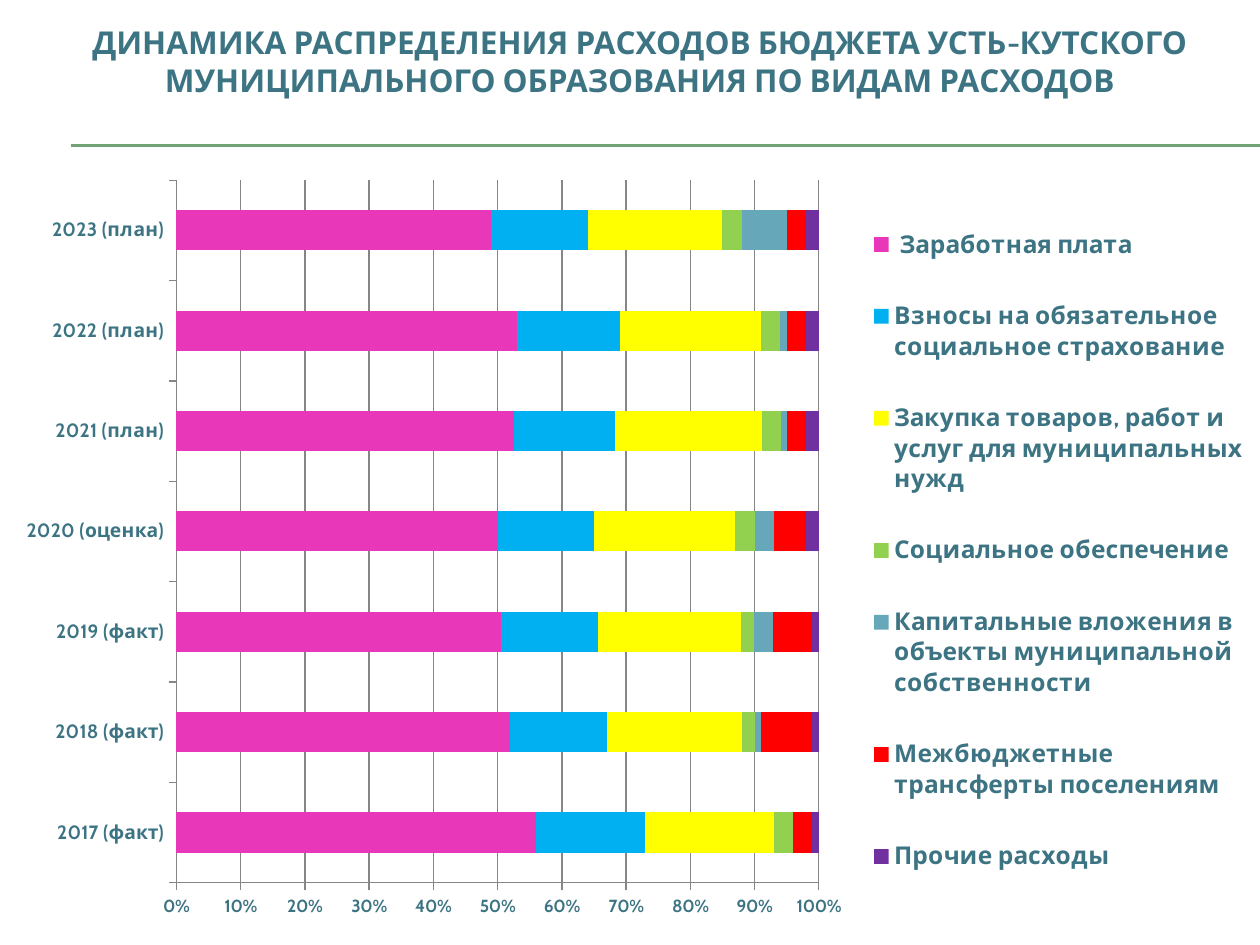
"""Build a slide with a stacked bar chart of municipal spending by type."""
from dataclasses import dataclass

from lxml import etree
from pptx import Presentation
from pptx.chart.data import CategoryChartData
from pptx.dml.color import RGBColor
from pptx.enum.chart import XL_CHART_TYPE, XL_LEGEND_POSITION, XL_TICK_MARK
from pptx.enum.shapes import MSO_CONNECTOR
from pptx.enum.text import MSO_ANCHOR, MSO_AUTO_SIZE, PP_ALIGN
from pptx.oxml.ns import qn
from pptx.util import Inches, Pt

STACKED_BARS = XL_CHART_TYPE.BAR_STACKED_100
LEGEND_RIGHT = XL_LEGEND_POSITION.RIGHT
TICK_OUTSIDE = XL_TICK_MARK.OUTSIDE
STRAIGHT = MSO_CONNECTOR.STRAIGHT
MIDDLE = MSO_ANCHOR.MIDDLE
NO_AUTOFIT = MSO_AUTO_SIZE.NONE
CENTER = PP_ALIGN.CENTER


@dataclass(frozen=True)
class Theme:
    font: str = "Cabin"
    text: str = "3C7483"
    rule: str = "72A376"
    grid: str = "868686"
    title_size: int = 18
    legend_size: int = 14
    category_size: int = 11
    value_size: int = 10


theme = Theme()

YEARS = ["2017 (факт)", "2018 (факт)", "2019 (факт)", "2020 (оценка)",
         "2021 (план)", "2022 (план)", "2023 (план)"]
SPENDING = [
    (" Заработная плата", "E937BA", [56, 52, 50, 50, 53, 53, 49]),
    ("Взносы на обязательное социальное страхование", "00B0F0",
     [17, 15, 15, 15, 16, 16, 15]),
    ("Закупка товаров, работ и услуг для муниципальных нужд", "FFFF00",
     [20, 21, 22, 22, 23, 22, 21]),
    ("Социальное обеспечение", "92D050", [3, 2, 2, 3, 3, 3, 3]),
    ("Капитальные вложения в объекты муниципальной собственности", "66A7B9",
     [0, 1, 3, 3, 1, 1, 7]),
    ("Межбюджетные трансферты поселениям", "FF0000", [3, 8, 6, 5, 3, 3, 3]),
    ("Прочие расходы", "7030A0", [1, 1, 1, 2, 2, 2, 2]),
]


def style_font(font, size):
    font.name = theme.font
    font.size = Pt(size)
    font.bold = True
    font.color.rgb = RGBColor.from_string(theme.text)


def set_layout(parent, index, settings):
    for old_layout in parent.findall(qn("c:layout")):
        parent.remove(old_layout)
    layout = etree.Element(qn("c:layout"))
    manual = etree.SubElement(layout, qn("c:manualLayout"))
    for name, value in settings.items():
        etree.SubElement(manual, qn(f"c:{name}")).set("val", str(value))
    parent.insert(index, layout)


presentation = Presentation()
presentation.slide_width = Inches(10)
presentation.slide_height = Inches(7.5)
slide = presentation.slides.add_slide(presentation.slide_layouts[5])

for rule_top in (1.15, 1.16):
    rule = slide.shapes.add_connector(
        STRAIGHT, Inches(0.56), Inches(rule_top), Inches(10), Inches(rule_top))
    rule.line.color.rgb = RGBColor.from_string(theme.rule)
    rule.line.width = Pt(0.75)
    etree.SubElement(rule._element.spPr, qn("a:effectLst"))

title = slide.shapes.title
title.left, title.top = Inches(0.33), Inches(0.05)
title.width, title.height = Inches(9.5), Inches(0.87)
title.text_frame.text = ("ДИНАМИКА РАСПРЕДЕЛЕНИЯ РАСХОДОВ БЮДЖЕТА УСТЬ-КУТСКОГО "
                         "МУНИЦИПАЛЬНОГО ОБРАЗОВАНИЯ ПО ВИДАМ РАСХОДОВ")
title.text_frame.word_wrap = True
title.text_frame.auto_size = NO_AUTOFIT
title.text_frame.vertical_anchor = MIDDLE
paragraph = title.text_frame.paragraphs[0]
paragraph.alignment = CENTER
style_font(paragraph.runs[0].font, theme.title_size)

chart_data = CategoryChartData()
chart_data.categories = YEARS
for name, color, values in SPENDING:
    chart_data.add_series(name, values)
chart = slide.shapes.add_chart(
    STACKED_BARS, Inches(0), Inches(1.31), Inches(10), Inches(6.06), chart_data).chart
chart.has_title = False
style_font(chart.font, theme.legend_size)

plot = chart.plots[0]
plot.gap_width = 150
plot.overlap = 100
plot.vary_by_categories = False
for series, (name, color, values) in zip(plot.series, SPENDING):
    series.format.fill.solid()
    series.format.fill.fore_color.rgb = RGBColor.from_string(color)

for axis, size in ((chart.category_axis, theme.category_size),
                   (chart.value_axis, theme.value_size)):
    style_font(axis.tick_labels.font, size)
    axis.major_tick_mark = TICK_OUTSIDE
    axis.format.line.color.rgb = RGBColor.from_string(theme.grid)
value_axis = chart.value_axis
value_axis.minimum_scale, value_axis.maximum_scale = 0, 1
value_axis.major_unit = 0.1
value_axis.tick_labels.number_format = "0%"
value_axis.tick_labels.number_format_is_linked = False
value_axis.has_major_gridlines = True
value_axis.major_gridlines.format.line.color.rgb = RGBColor.from_string(theme.grid)

chart.has_legend = True
legend = chart.legend
legend.position = LEGEND_RIGHT
legend.include_in_layout = False
style_font(legend.font, theme.legend_size)

set_layout(chart._chartSpace.chart.plotArea, 0, {
    "layoutTarget": "inner", "xMode": "edge", "yMode": "edge",
    "x": 0.14, "y": 0.02, "w": 0.51, "h": 0.92})
set_layout(legend._element, 1, {
    "xMode": "edge", "yMode": "edge", "x": 0.68, "y": 0.03, "w": 0.32, "h": 0.95})

presentation.save("out.pptx")
